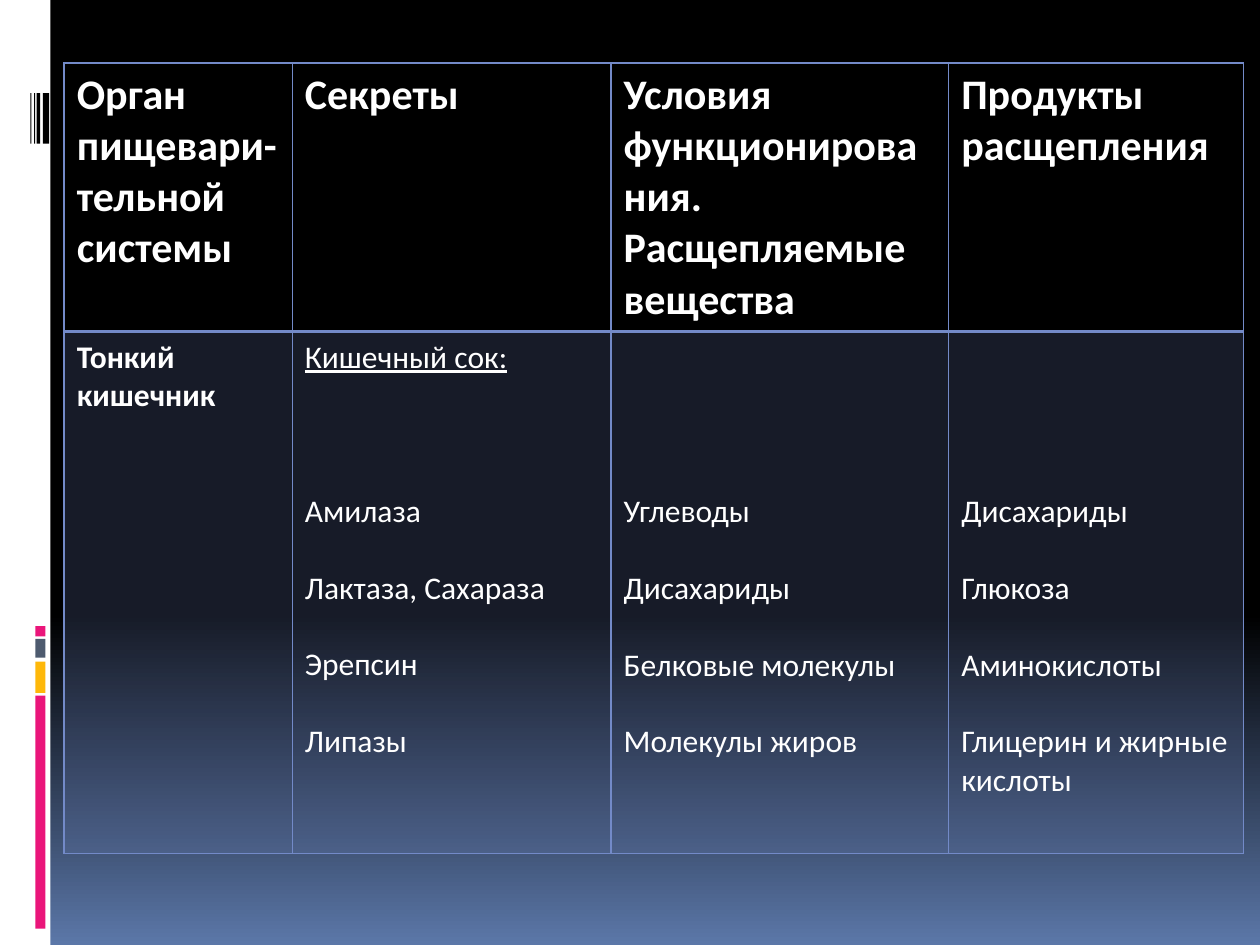
from typing import NamedTuple

from lxml import etree
from pptx import Presentation
from pptx import util as u
from pptx.dml.color import RGBColor
from pptx.enum import shapes, text
from pptx.oxml import ns

COLORS = {
    "white": "FFFFFF", "black": "000000", "pink": "EA157A", "amber": "FEB80A",
    "slate": "4E5B6F", "dusk": "5B77A8", "grid": "738AC8",
}
HEADER = {"name": "Calibri", "size": u.Pt(24), "bold": True}
ORGAN = {**HEADER, "size": u.Pt(18)}
BODY = {**ORGAN, "bold": False}
SECRET = {**BODY, "underline": True}
LINE = 22
INSET = 0.05


class Stripe(NamedTuple):
    left: float
    top: float
    width: float
    height: float
    color: str


class Line(NamedTuple):
    words: str
    style: dict
    skipped: int = 0


class Entry(NamedTuple):
    lines: list[Line]
    skipped: int = 0


STRIPES = [
    Stripe(0, 0, 0.4, 7.5, "white"),
    Stripe(0.28, 5.52, 0.08, 1.85, "pink"),
    Stripe(0.28, 5.25, 0.08, 0.25, "amber"),
    Stripe(0.28, 5.07, 0.08, 0.15, "slate"),
    Stripe(0.28, 4.97, 0.08, 0.08, "pink"),
] + [
    Stripe(left, 0.74, width, 0.4, "black")
    for left, width in [(0.34, 0.05), (0.29, 0.03), (0.27, 0.01), (0.24, 0.01)]
]

COLUMNS = [1.81, 2.53, 2.68, 2.34]
ROWS = [2.13, 4.14]
HEADINGS = [
    ["Орган пищевари-", "тельной системы"],
    ["Секреты"],
    ["Условия функционирования. Расщепляемые вещества"],
    ["Продукты расщепления"],
]
ENZYMES = ["Амилаза", "Лактаза, Сахараза", "Эрепсин", "Липазы"]
SUBSTANCES = ["Углеводы", "Дисахариды", "Белковые молекулы", "Молекулы жиров"]
PRODUCTS = ["Дисахариды", "Глюкоза", "Аминокислоты", "Глицерин и жирные кислоты"]


def rgb(name: str) -> RGBColor:
    return RGBColor.from_string(COLORS[name])


def spaced(items: list[str], first_gap: int = 0) -> list[Line]:
    return [Line(item, BODY, 1 if i else first_gap) for i, item in enumerate(items)]


def paint_background(page) -> None:
    fill = page.background.fill
    fill.gradient()
    fill.gradient_angle = 270
    for stop, position, color in zip(fill.gradient_stops, (0.65, 1), ("black", "dusk")):
        stop.position = position
        stop.color.rgb = rgb(color)


def draw_stripe(page, stripe: Stripe) -> None:
    box = page.shapes.add_shape(
        shapes.MSO_SHAPE.RECTANGLE, *(u.Inches(length) for length in stripe[:4]))
    box.shadow.inherit = False
    box.fill.solid()
    box.fill.fore_color.rgb = rgb(stripe.color)
    box.line.fill.background()


def draw_borders(cell, widths: dict[str, float]) -> None:
    properties = cell._tc.get_or_add_tcPr()
    for side, width in widths.items():
        line = etree.SubElement(properties, ns.qn(f"a:ln{side}"), w=str(u.Pt(width)))
        fill = etree.SubElement(line, ns.qn("a:solidFill"))
        etree.SubElement(fill, ns.qn("a:srgbClr"), val=COLORS["grid"])


def fill_cell(cell, shaded: bool) -> None:
    if not shaded:
        cell.fill.background()
        return
    cell.fill.solid()
    cell.fill.fore_color.rgb = rgb("grid")
    color = cell._tc.tcPr.find(f"{ns.qn('a:solidFill')}/{ns.qn('a:srgbClr')}")
    etree.SubElement(color, ns.qn("a:alpha"), val="20000")


def write_entry(cell, entry: Entry) -> None:
    cell.vertical_anchor = text.MSO_ANCHOR.TOP
    cell.margin_top = u.Inches(INSET) + u.Pt(LINE * entry.skipped)
    for i, line in enumerate(entry.lines):
        para = cell.text_frame.add_paragraph() if i else cell.text_frame.paragraphs[0]
        para.space_before = u.Pt(LINE * line.skipped)
        span = para.add_run()
        span.text = line.words
        for key, value in line.style.items():
            setattr(span.font, key, value)
        span.font.color.rgb = rgb("white")


def draw_table(page, grid: list[list[Entry]]) -> None:
    frame = page.shapes.add_table(
        len(ROWS), len(COLUMNS), u.Inches(0.51), u.Inches(0.5),
        u.Inches(sum(COLUMNS)), u.Inches(sum(ROWS)))
    table = frame.table
    table.horz_banding = False
    for column, width in zip(table.columns, COLUMNS):
        column.width = u.Inches(width)
    for r, (row, height) in enumerate(zip(table.rows, ROWS)):
        row.height = u.Inches(height)
        for cell, entry in zip(row.cells, grid[r]):
            draw_borders(cell, {"L": 1, "R": 1, "T": 1 if r == 0 else 2,
                                "B": 2 if r == 0 else 1})
            fill_cell(cell, shaded=r > 0)
            write_entry(cell, entry)


def main() -> None:
    deck = Presentation()
    deck.slide_width, deck.slide_height = u.Inches(10), u.Inches(7.5)
    page = deck.slides.add_slide(deck.slide_layouts.get_by_name("Blank"))
    paint_background(page)
    for stripe in STRIPES:
        draw_stripe(page, stripe)
    draw_table(page, [
        [Entry([Line(words, HEADER) for words in heading]) for heading in HEADINGS],
        [
            Entry([Line("Тонкий кишечник", ORGAN)]),
            Entry([Line("Кишечный сок:", SECRET)] + spaced(ENZYMES, first_gap=3)),
            Entry(spaced(SUBSTANCES), skipped=4),
            Entry(spaced(PRODUCTS), skipped=4),
        ],
    ])
    deck.save("out.pptx")


if __name__ == "__main__":
    main()
